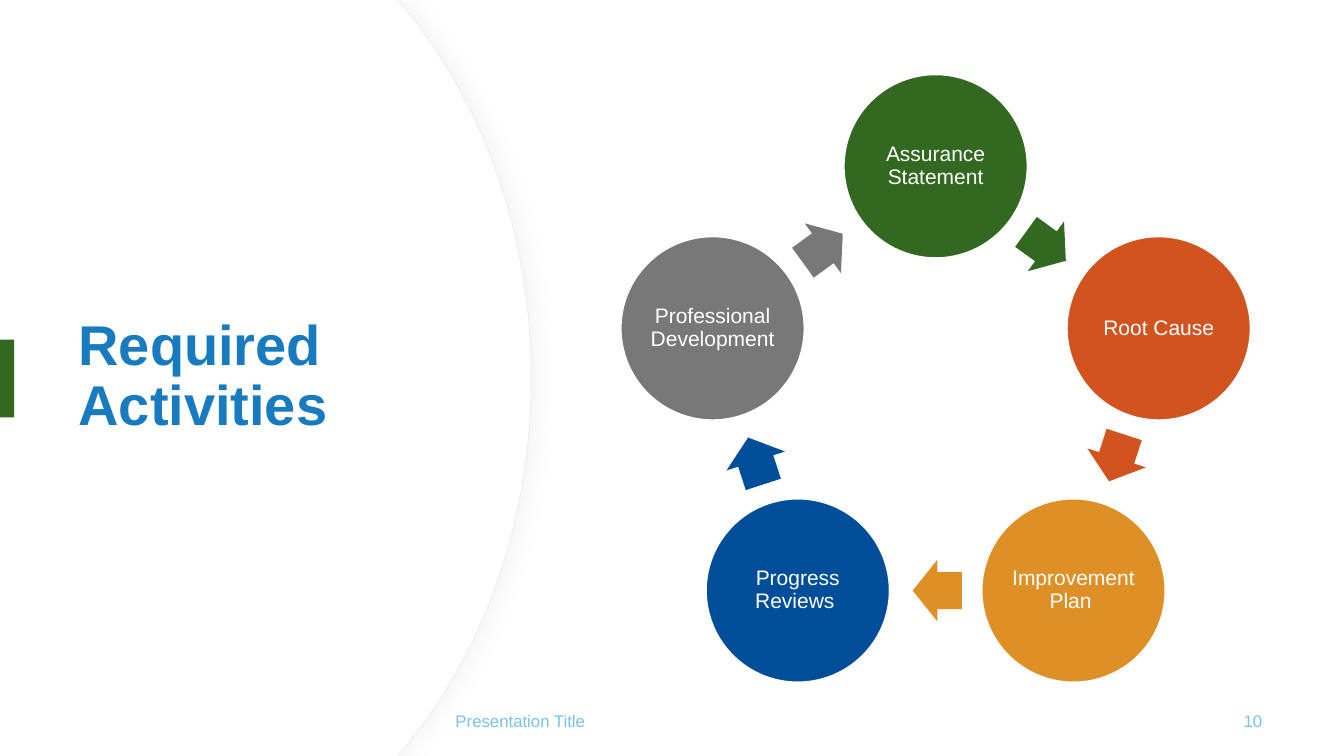
from math import cos, pi, radians, sin

from lxml.etree import SubElement
from pptx import Presentation
from pptx.dml.color import RGBColor
from pptx.enum.shapes import MSO_SHAPE as Shape
from pptx.enum.text import MSO_ANCHOR as Anchor, PP_ALIGN as Align
from pptx.oxml.ns import qn
from pptx.util import Cm, Pt

COLORS = {
    "white": "FFFFFF", "edge": "EFEFEF", "shadow": "D9D9D9",
    "title": "187BC0", "footer": "7CC0EF", "green": "326820",
    "orange": "D15420", "gold": "DE9027", "blue": "004E9A", "gray": "787878",
}
FONT = "Arial"
TITLE = "Required Activities"
# The trailing spaces are part of the labels.
STEPS = [
    ("Assurance Statement", "green"),
    ("Root Cause", "orange"),
    ("Improvement Plan ", "gold"),
    ("Progress Reviews ", "blue"),
    ("Professional Development", "gray"),
]
FOOTERS = [
    ("Presentation Title", 11.23, 11.43, Align.LEFT),
    ("10", 24.44, 7.62, Align.RIGHT),
]

# Lengths in centimetres
SLIDE_WIDTH, SLIDE_HEIGHT = 33.87, 19.05
RING_X, RING_Y, RING_RADIUS = 23.58, 10.1, 5.91
CIRCLE = 4.62
ARROW_LENGTH, ARROW_WIDTH, ARROW_SETBACK = 1.24, 1.55, 0.04
# Upper half of the panel's side: corner, curve start, two handles, curve end
PANEL_SIDE = [(10.01, 0), (10.19, 0.2), (12.17, 2.59), (13.39, 5.89),
              (13.39, SLIDE_HEIGHT / 2)]
CURVE_STARTS = (2, 5)


def color(name):
    return RGBColor.from_string(COLORS[name])


def paint(shape, fill, line=None, width=1):
    shape.shadow.inherit = False
    shape.fill.solid()
    shape.fill.fore_color.rgb = color(fill)
    if line:
        shape.line.color.rgb = color(line)
        shape.line.width = Pt(width)
    else:
        shape.line.fill.background()


def write(shape, text, size, ink, align=Align.LEFT, bold=False, spacing=None):
    frame = shape.text_frame
    frame.word_wrap = True
    frame.vertical_anchor = Anchor.MIDDLE
    frame.text = text
    para = frame.paragraphs[0]
    para.alignment = align
    para.line_spacing = spacing
    font = para.runs[0].font
    font.name, font.size, font.bold = FONT, Pt(size), bold
    font.color.rgb = color(ink)


def add_text(slide, left, top, width, height, *style):
    box = slide.shapes.add_textbox(Cm(left), Cm(top), Cm(width), Cm(height))
    write(box, *style)


def add_centered(slide, kind, x, y, width, height):
    return slide.shapes.add_shape(
        kind, Cm(x - width / 2), Cm(y - height / 2), Cm(width), Cm(height))


def add_panel(slide, inset):
    """Add the left panel, its curved side moved left by inset."""
    upper = [(x - inset, y) for x, y in PANEL_SIDE]
    lower = [(x, SLIDE_HEIGHT - y) for x, y in reversed(upper[:-1])]
    outline = upper + lower + [(0, SLIDE_HEIGHT)]
    builder = slide.shapes.build_freeform(0, 0)
    builder.add_line_segments([(Cm(x), Cm(y)) for x, y in outline], close=True)
    panel = builder.convert_to_shape()
    segments = list(panel._element.iter(qn("a:lnTo")))
    for start in CURVE_STARTS:
        merge_into_curve(segments[start:start + 3])
    return panel


def merge_into_curve(segments):
    """Turn three line segments into one cubic curve through their points."""
    outline = segments[0].getparent()
    curve = SubElement(outline, qn("a:cubicBezTo"))
    segments[0].addprevious(curve)
    for segment in segments:
        curve.append(segment[0])
        outline.remove(segment)


def add_soft_shadow(shape):
    effects = shape._element.spPr.find(qn("a:effectLst"))
    shadow = SubElement(effects, qn("a:outerShdw"), blurRad=str(Pt(14)),
                        dist=str(Pt(3)), dir="0", algn="l", rotWithShape="0")
    tint = SubElement(shadow, qn("a:srgbClr"), val=COLORS["shadow"])
    SubElement(tint, qn("a:alpha"), val="30000")


def add_step(slide, index, label, fill):
    """Add one circle of the ring and the arrow that leads to the next."""
    angle = index * 2 * pi / len(STEPS)
    circle = add_centered(slide, Shape.OVAL, RING_X + RING_RADIUS * sin(angle),
                          RING_Y - RING_RADIUS * cos(angle), CIRCLE, CIRCLE)
    paint(circle, fill, "white")
    frame = circle.text_frame
    frame.margin_left = frame.margin_right = Cm(0.05)
    frame.margin_top = frame.margin_bottom = Cm(0.05)
    write(circle, label, 15, "white", Align.CENTER, False, 0.9)

    half_turn = pi / len(STEPS)
    middle = angle + half_turn
    reach = RING_RADIUS * cos(half_turn)
    arrow = add_centered(
        slide, Shape.RIGHT_ARROW,
        RING_X + reach * sin(middle) - ARROW_SETBACK * cos(middle),
        RING_Y - reach * cos(middle) - ARROW_SETBACK * sin(middle),
        ARROW_LENGTH, ARROW_WIDTH)
    arrow.rotation = round(middle / radians(1))
    arrow.adjustments[0], arrow.adjustments[1] = 0.6, 0.5
    paint(arrow, fill)


def main():
    deck = Presentation()
    deck.slide_width, deck.slide_height = Cm(SLIDE_WIDTH), Cm(SLIDE_HEIGHT)
    slide = deck.slides.add_slide(deck.slide_layouts[6])

    back_panel = add_panel(slide, 0)
    paint(back_panel, "white", "edge", 0.75)
    add_soft_shadow(back_panel)
    paint(add_panel(slide, 0.03), "white")

    add_text(slide, 1.73, 3.23, 10, 12.57, TITLE, 40, "title", Align.LEFT, True, 0.9)
    accent = slide.shapes.add_shape(Shape.RECTANGLE, 0, Cm(8.56), Cm(0.36), Cm(1.96))
    paint(accent, "green")

    for text, left, width, align in FOOTERS:
        add_text(slide, left, 17.65, width, 1.02, text, 12, "footer", align)
    for index, (label, fill) in enumerate(STEPS):
        add_step(slide, index, label, fill)

    deck.save("out.pptx")


if __name__ == "__main__":
    main()
